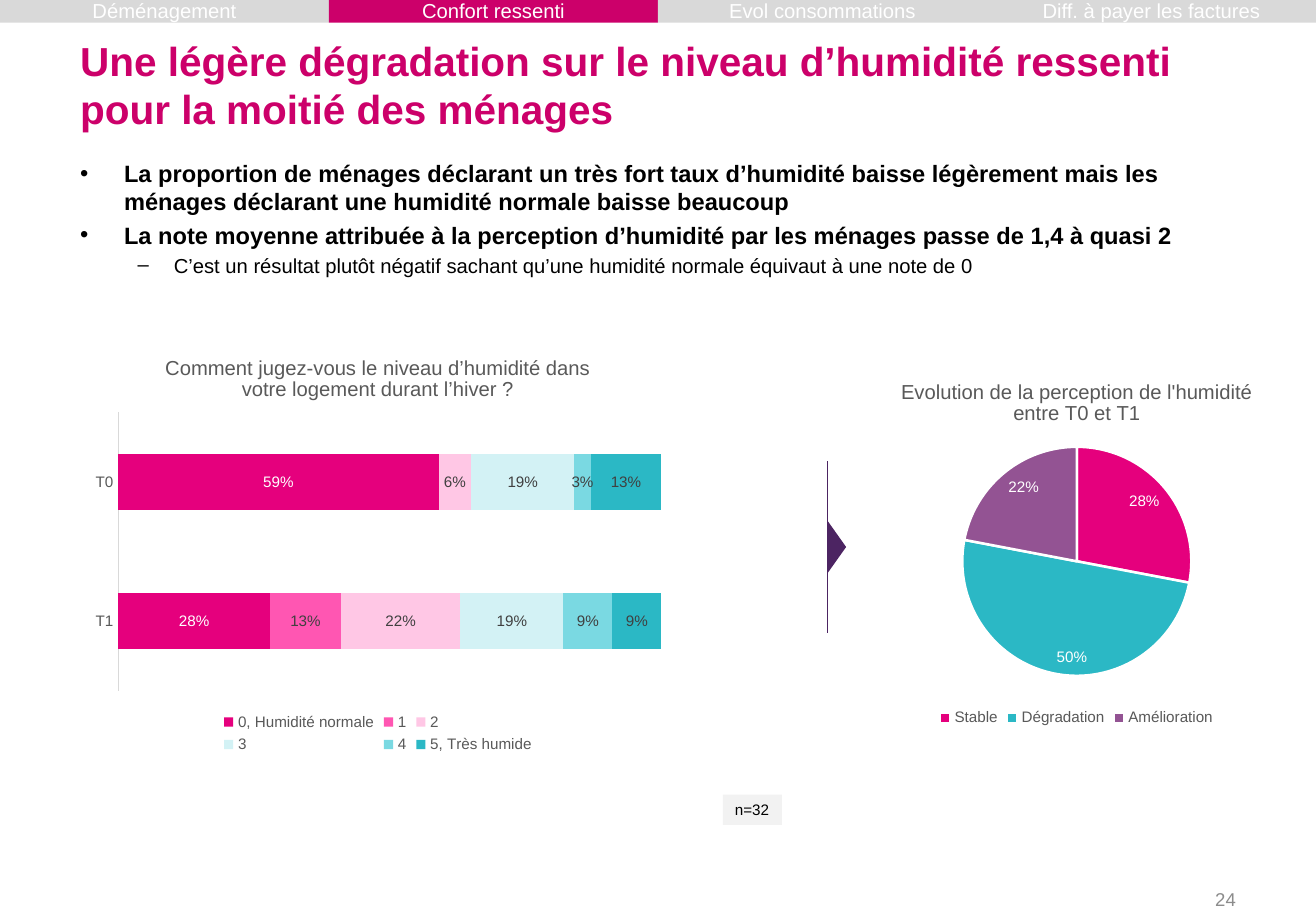
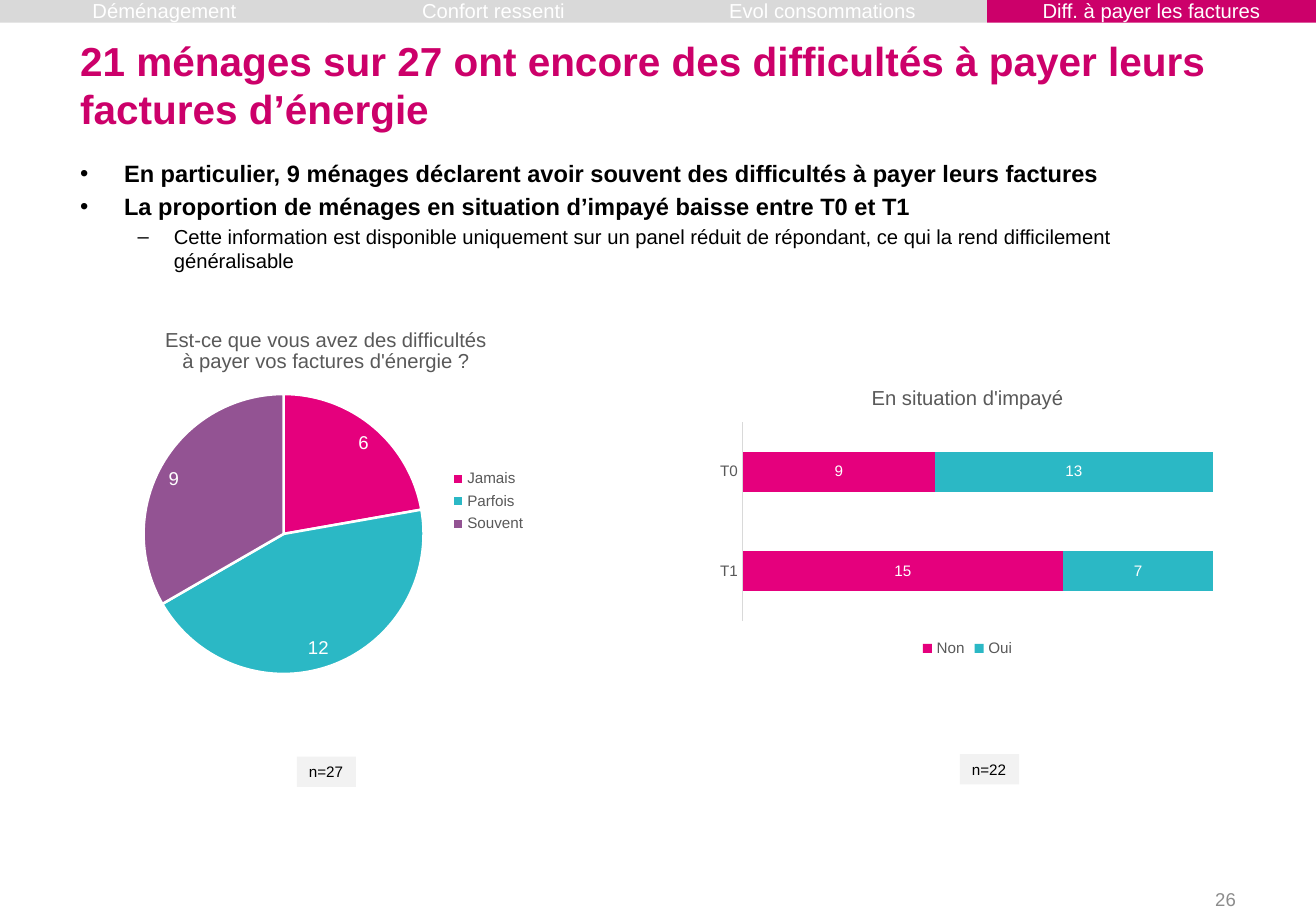
import pptx
import pptx.chart.data
import pptx.dml.color
import pptx.enum.chart
import pptx.enum.shapes
import pptx.enum.text
import pptx.oxml
import pptx.oxml.ns
import pptx.util
from lxml import etree

Pt = pptx.util.Pt
qn = pptx.oxml.ns.qn
XL = pptx.enum.chart
SHAPE = pptx.enum.shapes.MSO_SHAPE
ANCHOR = pptx.enum.text.MSO_ANCHOR
ALIGN = pptx.enum.text.PP_ALIGN

FONT = "Arial"
ACCENT, TAB_GREY, NOTE_GREY = "CC006A", "D9D9D9", "F2F2F2"
WHITE, BLACK, GREY, DARK, PAGE_GREY = "FFFFFF", "000000", "595959", "404040", "8C8C8C"
PINK, TEAL, PURPLE, ARROW = "E5007D", "2BB8C5", "935393", "4C2462"
SLIDE_W, SLIDE_H = 780, 540
TABS = ["Déménagement", "Confort ressenti", "Evol consommations", "Diff. à payer les factures"]


def rgb(color):
    """Turn a hex string into a colour."""
    return pptx.dml.color.RGBColor.from_string(color)


def style(font, size, color, bold=False):
    """Set the look of a font."""
    font.name, font.size, font.bold = FONT, Pt(size), bold
    font.color.rgb = rgb(color)


def fill(shape, color):
    """Give a shape or chart part a solid fill."""
    shape.fill.solid()
    shape.fill.fore_color.rgb = rgb(color)


def add_box(shapes, kind, x, y, w, h, color):
    """Add a flat shape without outline."""
    sp = shapes.add_shape(kind, Pt(x), Pt(y), Pt(w), Pt(h))
    sp.shadow.inherit = False
    sp.line.fill.background()
    fill(sp, color)
    return sp


def add_text(s, text, x, y, w, h, size, color, bold=False, anchor=ANCHOR.TOP, align=ALIGN.LEFT):
    """Add a wrapping text box with the shared insets."""
    tf = s.shapes.add_textbox(Pt(x), Pt(y), Pt(w), Pt(h)).text_frame
    tf.word_wrap, tf.vertical_anchor = True, anchor
    tf.margin_left = tf.margin_right = Pt(8.5)
    tf.margin_top = tf.margin_bottom = Pt(4.25)
    tf.text = text
    for p in tf.paragraphs:
        p.alignment = align
        style(p.runs[0].font, size, color, bold)
    return tf


def add_bullets(s, items):
    """Add the body text from (level, text) pairs."""
    looks = [("•", 26, 26, 14), ("–", 55.5, 21.5, 12)]
    tf = add_text(s, "\n".join(text for _, text in items), 39, 90, 702, 80, 14, BLACK)
    for i, (p, (level, _)) in enumerate(zip(tf.paragraphs, items)):
        char, left, hang, size = looks[level]
        p.level = level
        p.space_before = Pt(size * 0.2 if i else 0)
        pPr = p._p.get_or_add_pPr()
        pPr.set("marL", str(Pt(left)))
        pPr.set("indent", str(-Pt(hang)))
        etree.SubElement(pPr, qn("a:buFont")).set("typeface", FONT)
        etree.SubElement(pPr, qn("a:buChar")).set("char", char)
        style(p.runs[0].font, size, BLACK, level == 0)


def add_tabs(s, active):
    """Add the navigation band with one tab highlighted."""
    w = SLIDE_W / len(TABS)
    for i, name in enumerate(TABS):
        color = ACCENT if i == active else TAB_GREY
        sp = add_box(s.shapes, SHAPE.RECTANGLE, i * w, -1, w, 14.5, color)
        tf = sp.text_frame
        tf.margin_top = tf.margin_bottom = 0
        tf.vertical_anchor = ANCHOR.MIDDLE
        tf.text = name
        tf.paragraphs[0].alignment = ALIGN.CENTER
        style(tf.paragraphs[0].runs[0].font, 12, WHITE)


def add_note(s, text, x, y):
    """Add a sample-size tag."""
    tf = add_box(s.shapes, SHAPE.RECTANGLE, x, y, 35, 18, NOTE_GREY).text_frame
    tf.word_wrap = False
    tf.text = text
    tf.paragraphs[0].alignment = ALIGN.LEFT
    style(tf.paragraphs[0].runs[0].font, 9, BLACK)


def add_arrow(s, x, top, bottom):
    """Add a vertical rule with a triangle pointing right."""
    shapes = s.shapes.add_group_shape().shapes
    line = shapes.add_connector(pptx.enum.shapes.MSO_CONNECTOR.STRAIGHT,
                                Pt(x), Pt(top), Pt(x), Pt(bottom))
    line.line.color.rgb = rgb(ARROW)
    line.line.width = Pt(0.75)
    etree.SubElement(line._element.spPr, qn("a:effectLst"))
    w, h = 31, 11
    sp = add_box(shapes, SHAPE.ISOSCELES_TRIANGLE,
                 x + h / 2 - w / 2, (top + bottom) / 2 - h / 2, w, h, ARROW)
    sp.rotation = 90


def add_chart(s, kind, title, box, plot, legend, cats, series):
    """Add a titled chart whose plot area takes the given fractions of its box."""
    data = pptx.chart.data.CategoryChartData()
    data.categories = cats
    for name, values in series:
        data.add_series(name, values)
    chart = s.shapes.add_chart(kind, *(Pt(v) for v in box), data).chart
    style(chart.font, 10, BLACK)
    chart.has_title = True
    tf = chart.chart_title.text_frame
    tf.text = title
    style(tf.paragraphs[0].runs[0].font, 12, GREY)
    chart.chart_title.include_in_layout = False
    chart.has_legend = True
    chart.legend.position = legend
    chart.legend.include_in_layout = False
    style(chart.legend.font, 9, GREY)
    area = chart.element.find(".//" + qn("c:plotArea"))
    for old in area.findall(qn("c:layout")):
        area.remove(old)
    layout = etree.Element(qn("c:layout"))
    manual = etree.SubElement(layout, qn("c:manualLayout"))
    values = ["inner", "edge", "edge", *plot]
    for tag, value in zip(["layoutTarget", "xMode", "yMode", "x", "y", "w", "h"], values):
        etree.SubElement(manual, qn("c:" + tag)).set("val", str(value))
    area.insert(0, layout)
    return chart


def add_labels(labels, size, color, number_format, position):
    """Format data labels that show values."""
    labels.show_value = True
    labels.number_format, labels.number_format_is_linked = number_format, False
    labels.position = position
    style(labels.font, size, color)


def add_bars(s, title, box, plot, series, number_format):
    """Add 100 % stacked bars from (name, values, fill, label colour) rows."""
    chart = add_chart(s, XL.XL_CHART_TYPE.BAR_STACKED_100, title, box, plot,
                      XL.XL_LEGEND_POSITION.BOTTOM, ["T1", "T0"], [row[:2] for row in series])
    chart.plots[0].gap_width, chart.plots[0].overlap = 150, 100
    chart.plots[0].vary_by_categories = False
    chart.value_axis.has_major_gridlines = False
    chart.value_axis.visible = False
    axis = chart.category_axis
    axis.major_tick_mark = XL.XL_TICK_MARK.NONE
    axis.format.line.color.rgb = rgb(TAB_GREY)
    axis.format.line.width = Pt(0.75)
    style(axis.tick_labels.font, 9, GREY)
    for ser, (_, _, color, label_color) in zip(chart.plots[0].series, series):
        fill(ser.format, color)
        add_labels(ser.data_labels, 9, label_color, number_format,
                   XL.XL_LABEL_POSITION.CENTER)


def add_pie(s, title, box, plot, legend, cats, values, size, percent):
    """Add a pie with white seams and labels inside its rim."""
    chart = add_chart(s, XL.XL_CHART_TYPE.PIE, title, box, plot, legend, cats,
                      [("Series 1", values)])
    pie = chart.plots[0]
    pie.vary_by_categories = True
    for i, color in enumerate([PINK, TEAL, PURPLE]):
        fmt = pie.series[0].points[i].format
        fill(fmt, color)
        fmt.line.color.rgb = rgb(WHITE)
        fmt.line.width = Pt(1.5)
    labels = pie.series[0].data_labels
    add_labels(labels, size, WHITE, "0%" if percent else "0", XL.XL_LABEL_POSITION.INSIDE_END)
    labels.show_percentage, labels.show_value = percent, not percent


def add_slide(prs, active, title, bullets, page):
    """Add a slide with the shared band, title, body and page number."""
    s = prs.slides.add_slide(prs.slide_layouts[6])
    add_text(s, page, 559, 522, 182, 21.5, 11, PAGE_GREY,
             anchor=ANCHOR.MIDDLE, align=ALIGN.RIGHT)
    add_text(s, title, 39, 15, 702, 68, 24, ACCENT, True, ANCHOR.BOTTOM)
    add_bullets(s, bullets)
    add_tabs(s, active)
    return s


def add_humidity_slide(prs):
    """Add the slide on perceived humidity."""
    s = add_slide(prs, 1, "Une légère dégradation sur le niveau d’humidité ressenti pour la moitié des ménages", [
        (0, "La proportion de ménages déclarant un très fort taux d’humidité baisse légèrement mais les ménages déclarant une humidité normale baisse beaucoup"),
        (0, "La note moyenne attribuée à la perception d’humidité par les ménages passe de 1,4 à quasi 2"),
        (1, "C’est un résultat plutôt négatif sachant qu’une humidité normale équivaut à une note de 0"),
    ], "24")
    add_arrow(s, 490.5, 273.5, 375)
    add_note(s, "n=32", 428.5, 471)
    add_bars(s, "Comment jugez-vous le niveau d’humidité dans votre logement durant l’hiver ?",
             (49, 199.5, 350, 250), (0.06, 0.18, 0.92, 0.66), [
                 ("0, Humidité normale", (0.28, 0.59), PINK, WHITE),
                 ("1", (0.13, 0), "FF56B2", DARK),
                 ("2", (0.22, 0.06), "FFC7E5", DARK),
                 ("3", (0.19, 0.19), "D3F2F5", DARK),
                 ("4", (0.09, 0.03), "7AD9E2", DARK),
                 ("5, Très humide", (0.09, 0.13), TEAL, DARK),
             ], "0%;;")
    add_pie(s, "Evolution de la perception de l'humidité entre T0 et T1",
            (501, 214.5, 274.5, 219), (0.25, 0.23, 0.5, 0.62), XL.XL_LEGEND_POSITION.BOTTOM,
            ["Stable", "Dégradation", "Amélioration"], (28, 50, 22), 9, True)


def add_bills_slide(prs):
    """Add the slide on difficulties paying energy bills."""
    s = add_slide(prs, 3, "21 ménages sur 27 ont encore des difficultés à payer leurs factures d’énergie", [
        (0, "En particulier, 9 ménages déclarent avoir souvent des difficultés à payer leurs factures"),
        (0, "La proportion de ménages en situation d’impayé baisse entre T0 et T1"),
        (1, "Cette information est disponible uniquement sur un panel réduit de répondant, ce qui la rend difficilement généralisable"),
    ], "26")
    add_note(s, "n=22", 569, 447)
    add_note(s, "n=27", 176, 448.5)
    add_pie(s, "Est-ce que vous avez des difficultés à payer vos factures d'énergie ?",
            (67.5, 183.5, 251.5, 227.5), (0.07, 0.22, 0.66, 0.73), XL.XL_LEGEND_POSITION.RIGHT,
            ["Jamais", "Parfois", "Souvent"], (6, 12, 9), 11, False)
    add_bars(s, "En situation d'impayé", (422, 219, 303, 173.5), (0.06, 0.18, 0.92, 0.68), [
        ("Non", (15, 9), PINK, WHITE),
        ("Oui", (7, 13), TEAL, WHITE),
    ], "0")


def main():
    """Build and save the presentation."""
    prs = pptx.Presentation()
    prs.slide_width, prs.slide_height = Pt(SLIDE_W), Pt(SLIDE_H)
    add_humidity_slide(prs)
    add_bills_slide(prs)
    prs.save("out.pptx")


if __name__ == "__main__":
    main()
